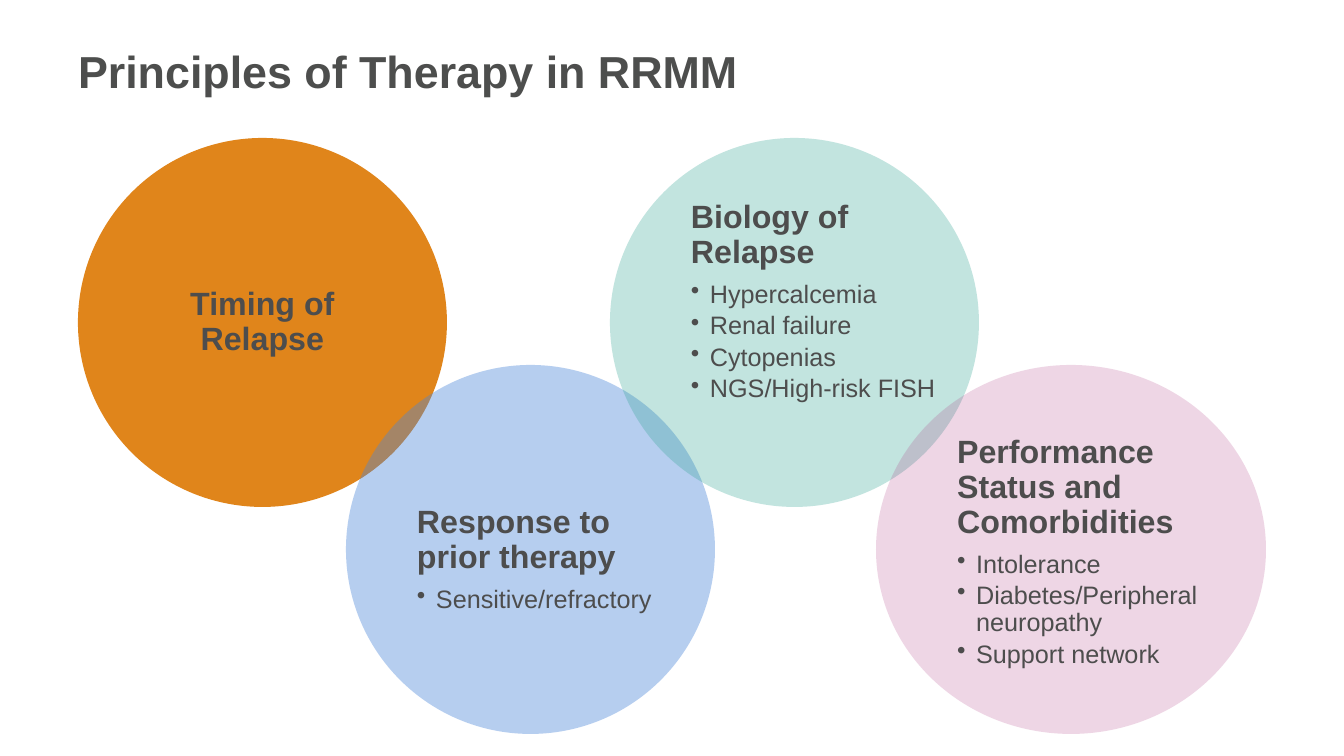
from dataclasses import dataclass

from lxml.etree import SubElement
from pptx import Presentation
from pptx.dml.color import RGBColor
from pptx.enum.shapes import MSO_SHAPE as Shape
from pptx.enum.text import MSO_ANCHOR as Anchor, MSO_AUTO_SIZE as AutoSize, PP_ALIGN as Align
from pptx.oxml.ns import qn
from pptx.util import Pt

PX = 914400 / 100.8


@dataclass(frozen=True)
class Theme:
    font: str = "Arial"
    title_color: str = "4D4E4D"
    text_color: str = "4D4D4D"
    title_size: int = 32
    heading_size: int = 23
    bullet_size: int = 18
    orange: str = "E0851B"
    blue: str = "4A86D9"
    green: str = "35A696"
    pink: str = "AD337F"


THEME = Theme()
UPPER, LOWER, HEIGHT = 138, 365, 369

# box, fill, opacity in percent, insets (left, top, right, bottom), heading, bullets
CIRCLES = [
    ((78, UPPER, 369, HEIGHT), THEME.orange, 100, (9, 9, 9, 9), "Timing of Relapse", []),
    ((346, LOWER, 369, HEIGHT), THEME.blue, 40, (17, 87, 0, 9),
     "Response to prior therapy", ["Sensitive/refractory"]),
    ((610, UPPER, 369, HEIGHT), THEME.green, 30, (27, 9, -14, 9), "Biology of Relapse",
     ["Hypercalcemia", "Renal failure", "Cytopenias", "NGS/High-risk FISH"]),
    ((876, LOWER, 390, HEIGHT), THEME.pink, 20, (24, 17, 6, 9),
     "Performance Status and Comorbidities",
     ["Intolerance", "Diabetes/Peripheral neuropathy", "Support network"]),
]


def px(length):
    return round(length * PX)


def apply(target, **formats):
    for name, value in formats.items():
        setattr(target, name, value)


def set_font(font, size, color, bold):
    apply(font, name=THEME.font, size=Pt(size), bold=bold)
    font.color.rgb = RGBColor.from_string(color)


def place(shape, box):
    left, top, width, height = map(px, box)
    apply(shape, left=left, top=top, width=width, height=height)


def add_title(page, box, text):
    title = page.shapes.title
    place(title, box)
    frame = title.text_frame
    apply(frame, text=text, vertical_anchor=Anchor.MIDDLE, auto_size=AutoSize.NONE)
    para = frame.paragraphs[0]
    para.alignment = Align.LEFT
    set_font(para.font, THEME.title_size, THEME.title_color, True)


def fill_circle(circle, color, opacity):
    circle.shadow.inherit = False
    circle.line.fill.background()
    circle.fill.solid()
    circle.fill.fore_color.rgb = RGBColor.from_string(color)
    if opacity < 100:
        tint = circle._element.spPr.find(".//" + qn("a:srgbClr"))
        SubElement(tint, qn("a:alpha"), val=str(opacity * 1000))


def add_bullet(frame, text):
    para = frame.add_paragraph()
    properties = para._p.get_or_add_pPr()
    properties.set("marL", str(px(19)))
    properties.set("indent", str(px(-19)))
    SubElement(properties, qn("a:buChar"), char="•")
    apply(para, text=text, level=1, alignment=Align.LEFT, line_spacing=0.9, space_after=Pt(3))
    set_font(para.font, THEME.bullet_size, THEME.text_color, False)


def add_circle(page, box, color, opacity, insets, heading, bullets):
    circle = page.shapes.add_shape(Shape.OVAL, *map(px, box))
    fill_circle(circle, color, opacity)
    frame = circle.text_frame
    left, top, right, bottom = map(px, insets)
    apply(frame, word_wrap=True, margin_left=left, margin_top=top, margin_right=right,
          margin_bottom=bottom, vertical_anchor=Anchor.TOP if bullets else Anchor.MIDDLE)
    para = frame.paragraphs[0]
    apply(para, text=heading, alignment=Align.LEFT if bullets else Align.CENTER,
          line_spacing=0.9, space_after=Pt(8))
    set_font(para.font, THEME.heading_size, THEME.text_color, True)
    for text in bullets:
        add_bullet(frame, text)


def add_principles_page(deck):
    page = deck.slides.add_slide(deck.slide_layouts.get_by_name("Title Only"))
    add_title(page, (68, 22, 1184, 97), "Principles of Therapy in RRMM")
    for circle in CIRCLES:
        add_circle(page, *circle)


def main():
    deck = Presentation()
    apply(deck, slide_width=px(1344), slide_height=px(756))
    add_principles_page(deck)
    deck.save("out.pptx")


if __name__ == "__main__":
    main()
